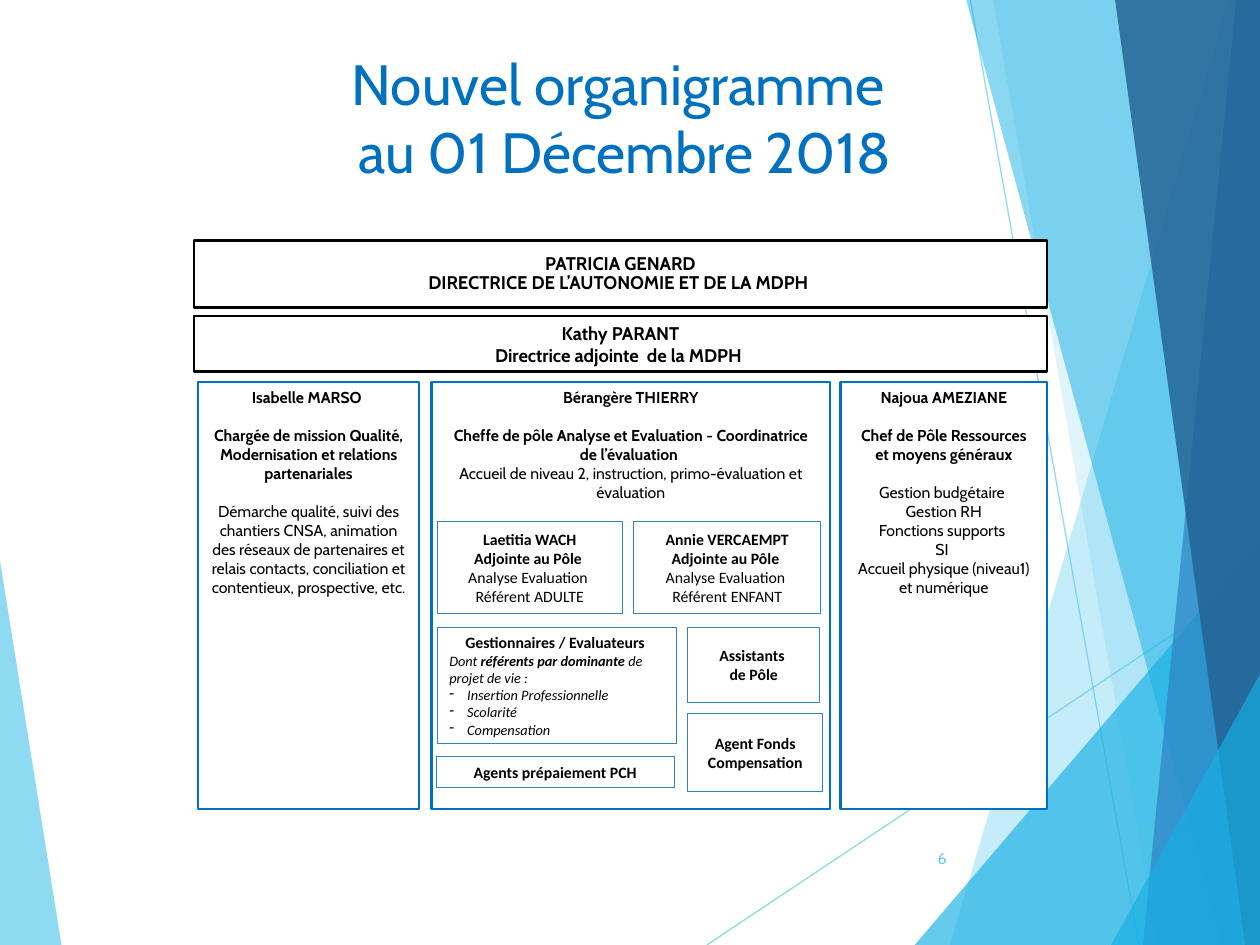
from dataclasses import dataclass

from lxml import etree
from pptx import Presentation
from pptx import util as u
from pptx.dml import color
from pptx.enum import shapes, text
from pptx.oxml import ns

WIDTH, HEIGHT = 25.4, 19.05
CENTER, LEFT, RIGHT = text.PP_ALIGN.CENTER, text.PP_ALIGN.LEFT, text.PP_ALIGN.RIGHT
MIDDLE, TOP = text.MSO_ANCHOR.MIDDLE, text.MSO_ANCHOR.TOP
BLANK_LINE = 10.9
BLACK, BLUE, STEEL, SKY, CYAN = "000000", "0070C0", "2E83C3", "5FCBEF", "17B0E4"


def rgb(value):
    return color.RGBColor.from_string(value)


def add_node(parent, tag, **attributes):
    return etree.SubElement(parent, ns.qn(tag), **attributes)


@dataclass
class Line:
    content: object
    bold: bool = True
    italic: bool = False
    size: float = 9
    gap: float = 0
    align: object = CENTER
    bullet: bool = False
    spacing: float = 1


@dataclass
class OrgChart:
    slide: object
    font: str = "Cabin"
    ink: str = BLACK

    def set_alpha(self, shape, percent):
        for node in shape._element.xpath("./p:spPr//a:srgbClr"):
            add_node(node, "a:alpha", val=str(percent * 1000))

    def polygon(self, points, fill, alpha):
        corners = [(u.Cm(x), u.Cm(y)) for x, y in points]
        builder = self.slide.shapes.build_freeform(*corners[0])
        builder.add_line_segments(corners[1:])
        shape = builder.convert_to_shape()
        shape.shadow.inherit = False
        shape.fill.solid()
        shape.fill.fore_color.rgb = rgb(fill)
        shape.line.fill.background()
        self.set_alpha(shape, alpha)

    def band(self, top, bottom, fill, alpha):
        self.polygon([(top, 0), (bottom, HEIGHT), (WIDTH, HEIGHT), (WIDTH, 0)], fill, alpha)

    def corner(self, left, top, fill, alpha):
        self.polygon([(left, HEIGHT), (WIDTH, top), (WIDTH, HEIGHT)], fill, alpha)

    def ray(self, *ends):
        connector = self.slide.shapes.add_connector(
            shapes.MSO_CONNECTOR.STRAIGHT, *map(u.Cm, ends))
        connector.line.color.rgb = rgb(SKY)
        connector.line.width = u.Pt(0.75)
        self.set_alpha(connector, 70)
        add_node(connector._element.spPr, "a:effectLst")

    def fill_text(self, frame, lines, font, ink, anchor):
        frame.word_wrap = True
        frame.vertical_anchor = anchor
        for index, line in enumerate(lines):
            paragraph = frame.paragraphs[0] if index == 0 else frame.add_paragraph()
            paragraph.alignment = line.align
            paragraph.line_spacing = line.spacing
            paragraph.space_before = u.Pt(line.gap)
            paragraph.font.name = font
            paragraph.font.size = u.Pt(line.size)
            paragraph.font.italic = line.italic
            paragraph.font.color.rgb = rgb(ink)
            if isinstance(line.content, str):
                paragraph.font.bold = line.bold
                paragraph.text = line.content
            else:
                for words, bold in line.content:
                    run = paragraph.add_run()
                    run.text = words
                    run.font.bold = bold
            if line.bullet:
                properties = paragraph._p.get_or_add_pPr()
                indent = u.Cm(0.36)
                properties.set("marL", str(indent))
                properties.set("indent", str(-indent))
                bullet = etree.Element(ns.qn("a:buChar"), char="-")
                properties.find(ns.qn("a:defRPr")).addprevious(bullet)

    def label(self, place, lines, ink, anchor=TOP):
        shape = self.slide.shapes.add_textbox(*map(u.Cm, place))
        self.fill_text(shape.text_frame, lines, self.font, ink, anchor)

    def box(self, place, lines, border=BLACK, weight=1.5, font=None, anchor=MIDDLE):
        shape = self.slide.shapes.add_shape(
            shapes.MSO_SHAPE.RECTANGLE, *map(u.Cm, place))
        shape.shadow.inherit = False
        shape.fill.solid()
        shape.fill.fore_color.rgb = rgb("FFFFFF")
        shape.line.color.rgb = rgb(border)
        shape.line.width = u.Pt(weight)
        self.fill_text(shape.text_frame, lines, font or self.font, self.ink, anchor)

    def column(self, left, width, lines):
        self.box((left, 7.7, width, 8.61), lines, BLUE, anchor=TOP)

    def team(self, place, lines, weight=0.5):
        self.box(place, lines, STEEL, weight, "Calibri")

    def deputy(self, left, width, name, public):
        self.team((left, 10.52, width, 1.85), [
            Line(name), Line("Adjointe au Pôle "),
            Line("Analyse Evaluation ", bold=False),
            Line(f"Référent {public}", bold=False)])


def draw_background(chart):
    chart.polygon([(0, 11.3), (1.24, HEIGHT), (0, HEIGHT)], SKY, 70)
    chart.ray(14.25, HEIGHT, WIDTH, 11.62)
    chart.ray(19.56, 0, 22.96, HEIGHT)
    chart.band(24.77, 19.15, SKY, 36)
    chart.band(20.02, 23.34, SKY, 20)
    chart.corner(18.44, 10.9, CYAN, 66)
    chart.band(19.48, 24.64, CYAN, 50)
    chart.band(24.92, 23.04, STEEL, 70)
    chart.band(22.48, 25.1, "226292", 82)
    chart.corner(22.4, 13.59, CYAN, 66)


def draw_management(chart):
    chart.label((3.99, 0.86, 17.2, 3.02), [
        Line("Nouvel organigramme \vau 01 Décembre 2018", bold=False, size=32.4)], BLUE)
    chart.label((17.91, 16.79, 1.42, 1.02), [
        Line("6", bold=False, align=RIGHT)], SKY, MIDDLE)
    chart.box((3.91, 4.85, 17.2, 1.35), [
        Line("PATRICIA GENARD\vDIRECTRICE DE L’AUTONOMIE ET DE LA MDPH ",
             size=10.5, spacing=0.85)])
    chart.box((3.91, 6.37, 17.2, 1.12), [
        Line("Kathy PARANT", size=10.5),
        Line("Directrice adjointe  de la MDPH ", size=10.5)])


def draw_columns(chart):
    chart.column(3.99, 4.46, [
        Line("Isabelle MARSO "),
        Line("Chargée de mission Qualité, Modernisation et relations partenariales",
             gap=BLANK_LINE),
        Line("Démarche qualité, suivi des chantiers CNSA, animation des réseaux de "
             "partenaires et relais contacts, conciliation et contentieux, "
             "prospective, etc. ", bold=False, gap=BLANK_LINE)])
    chart.column(8.7, 8.03, [
        Line("Bérangère THIERRY"),
        Line("Cheffe de pôle Analyse et Evaluation - Coordinatrice de l’évaluation ",
             gap=BLANK_LINE),
        Line("Accueil de niveau 2, instruction, primo-évaluation et évaluation",
             bold=False)])
    chart.column(16.94, 4.17, [
        Line("Najoua AMEZIANE"),
        Line("Chef de Pôle Ressources et moyens généraux", gap=BLANK_LINE),
        Line("Gestion budgétaire ", bold=False, gap=BLANK_LINE),
        *[Line(task, bold=False) for task in (
            "Gestion RH", "Fonctions supports ", "SI ",
            "Accueil physique (niveau1) et numérique")]])


def draw_teams(chart):
    chart.deputy(8.81, 3.74, "Laetitia WACH", "ADULTE")
    chart.deputy(12.77, 3.78, "Annie VERCAEMPT", "ENFANT")
    chart.team((8.81, 12.65, 4.83, 2.34), [
        Line("Gestionnaires / Evaluateurs "),
        Line([("Dont ", False), ("référents par dominante ", True),
              ("de projet de vie :", False)], italic=True, size=8.2, align=LEFT),
        *[Line(theme, bold=False, italic=True, size=8.2, align=LEFT, bullet=True)
          for theme in ("Insertion Professionnelle", "Scolarité", "Compensation")]],
        weight=0.25)
    chart.team((13.86, 12.65, 2.67, 1.52), [Line("Assistants "), Line("de Pôle")])
    chart.team((8.79, 15.24, 4.8, 0.64), [Line("Agents prépaiement PCH")])
    chart.team((13.86, 14.39, 2.73, 1.56), [Line("Agent Fonds Compensation")])


def main():
    presentation = Presentation()
    presentation.slide_width, presentation.slide_height = u.Cm(WIDTH), u.Cm(HEIGHT)
    chart = OrgChart(presentation.slides.add_slide(presentation.slide_layouts[6]))
    draw_background(chart)
    draw_management(chart)
    draw_columns(chart)
    draw_teams(chart)
    presentation.save("out.pptx")


if __name__ == "__main__":
    main()
